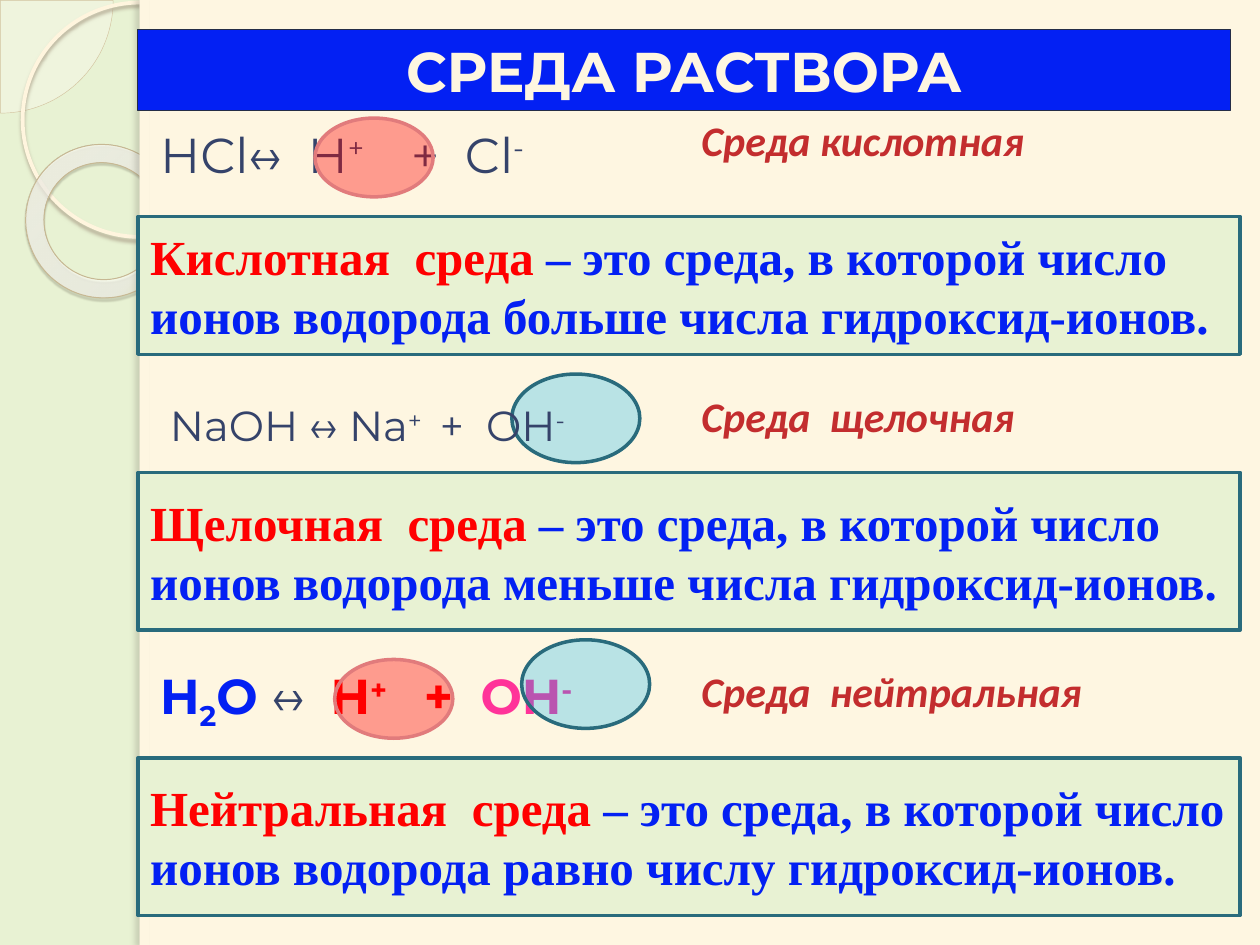
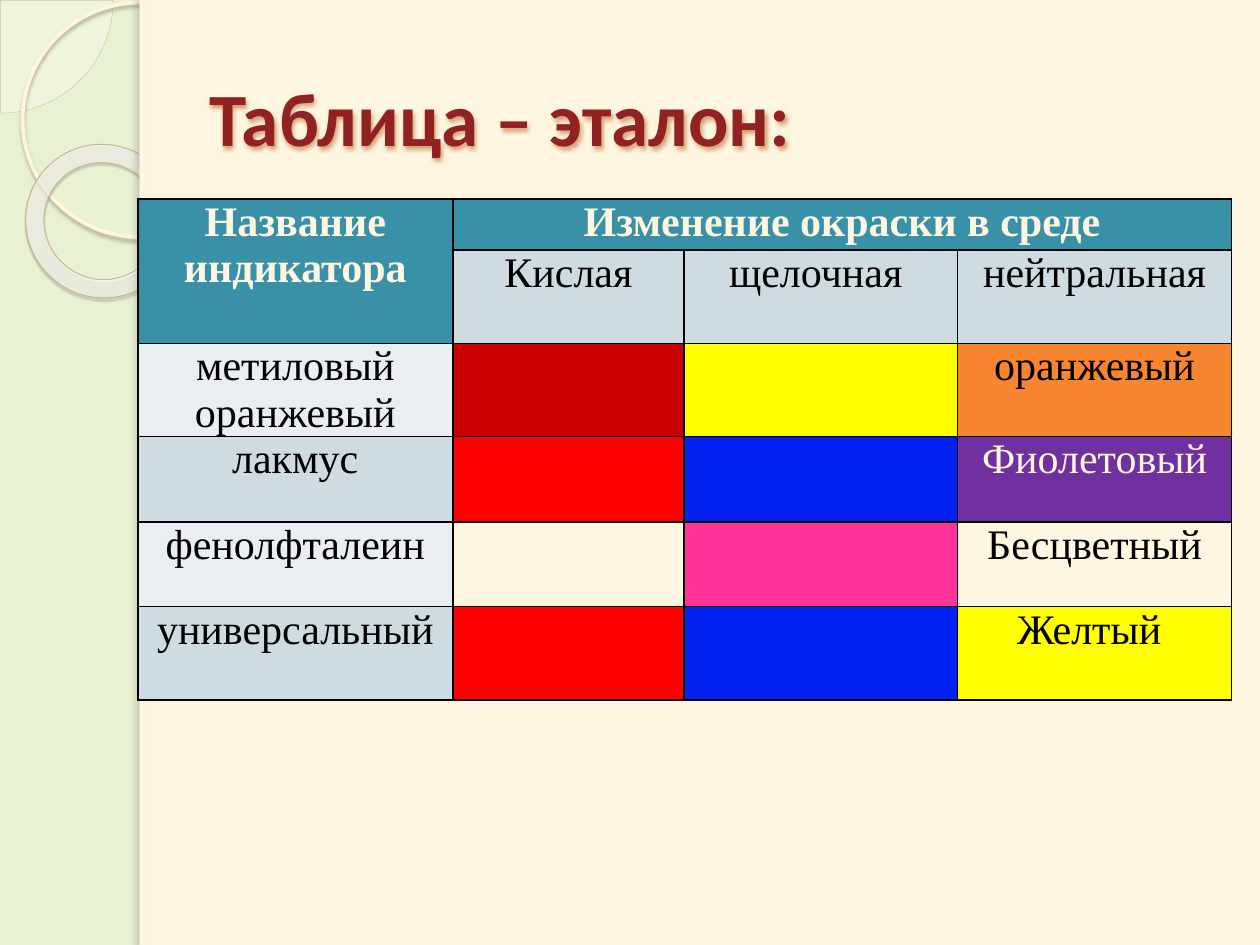
"""Builds two chemistry slides: the medium of a solution and a table of indicator colours."""
from pptx import Presentation, util as u
from pptx.dml.color import RGBColor
from pptx.enum import shapes, text
from pptx.oxml import parse_xml
from pptx.oxml.ns import nsdecls, qn

C = {
    "leaf": "E8F2D3", "cream": "FEF6E1", "blue": "0320F3", "navy": "242D46",
    "ink": "35436A", "red": "FF0000", "crimson": "C32D2E", "wine": "922222",
    "teal": "296B7C", "sky": "00B0F0", "rose": "E17B7C", "pink": "FF3399",
    "head": "3891A7", "band": "CEDCE1", "pale": "E8EEF1", "black": "000000",
    "scarlet": "CC0000", "yellow": "FFFF00", "orange": "F88631", "violet": "7030A0",
    "pearl": "FEFAF4", "sand": "D3C39F", "ring": "FFF5DE", "donut": "C7B893",
    "ring shade": "B0A68F", "donut shade": "5A5444", "edge shade": "736F63",
    "title shade": "C89058", "green edge": "65871D", "gold edge": "FFB809",
}
SERIF, SANS, FORMULA = "Times New Roman", "Calibri", "Montserrat"
SUP, SUB = {"baseline": "30000"}, {"baseline": "-25000"}
KIND = shapes.MSO_SHAPE

prs = Presentation()
prs.slide_width, prs.slide_height = u.Inches(10), u.Inches(7.5)
cell = prs.slide_width / 128


def write(frame, runs, size, font, bold=False, italic=False, align=text.PP_ALIGN.LEFT):
    """Adds runs given as (text, colour, rPr attributes) to the first paragraph."""
    frame.word_wrap = True
    line = frame.paragraphs[0]
    line.alignment = align
    for words, colour, attrs in runs:
        run = line.add_run()
        run.text = words
        run.font.size, run.font.name = u.Pt(size), font
        run.font.bold, run.font.italic = bold, italic
        run.font.color.rgb = RGBColor.from_string(C[colour])
        for key, value in attrs.items():
            run.font._element.set(key, value)


def draw(slide, kind, grid, fill=None, line=None, width=1, alpha=None):
    """Draws a preset shape placed in grid cells."""
    shape = slide.shapes.add_shape(kind, *[round(n * cell) for n in grid])
    shape.shadow.inherit = False
    if fill:
        shape.fill.solid()
        shape.fill.fore_color.rgb = RGBColor.from_string(C[fill])
    else:
        shape.fill.background()
    if alpha:
        colour = shape.element.spPr.find(qn("a:solidFill"))[0]
        colour.append(parse_xml(f'<a:alpha {nsdecls("a")} val="{alpha * 1000}"/>'))
    if line:
        shape.line.color.rgb = RGBColor.from_string(C[line])
        shape.line.width = u.Pt(width)
    else:
        shape.line.fill.background()
    return shape


media, standard = [prs.slides.add_slide(prs.slide_layouts[5]) for _ in range(2)]

master = prs.slide_master
master.background.fill.solid()
master.background.fill.fore_color.rgb = RGBColor.from_string(C["leaf"])
quarter = draw(media, KIND.PIE, (-11.4, -11.4, 22.9, 22.9), "pearl", "sand", 0.25, 33)
quarter.adjustments[0], quarter.adjustments[1] = 0, 54.02
circle = draw(media, KIND.OVAL, (2.3, 0.26, 23.8, 23.8), None, "ring", 2.15)
donut = draw(media, KIND.DONUT, (2.56, 14.72, 15.75, 15.5), None, "donut", 0.58)
donut.adjustments[0] = 0.12
donut.rotation = 38.6
stops = "".join(
    f'<a:gs pos="{pos}000"><a:srgbClr val="{tint}"><a:alpha val="{alpha}000"/></a:srgbClr></a:gs>'
    for pos, tint, alpha in [(0, "FFFCF6", 70), (70, "FFFEFB", 55), (100, "F0D28E", 60)])
donut_props = donut.element.spPr
donut_props.replace(donut_props.find(qn("a:noFill")), parse_xml(
    f'<a:gradFill {nsdecls("a")}><a:gsLst>{stops}</a:gsLst><a:path path="circle">'
    '<a:fillToRect l="-408000" t="-50000" r="508000" b="150000"/></a:path></a:gradFill>'))
panel = draw(media, KIND.RECTANGLE, (14.2, 0, 113.8, 96), "cream")
edge = draw(media, KIND.RECTANGLE, (14.2, 0, 1, 96), "cream")
for part in (quarter, circle, donut, panel, edge):
    master.shapes.element.append(part.element)

heading = media.shapes.title
heading.left, heading.top, heading.width, heading.height = [
    round(n * cell) for n in (14, 3, 111, 8.2)]
heading.fill.solid()
heading.fill.fore_color.rgb = RGBColor.from_string(C["blue"])
heading.line.color.rgb = RGBColor.from_string(C["navy"])
heading.line.width = u.Pt(0.75)
write(heading.text_frame, [("СРЕДА РАСТВОРА", "cream", {})], 32, FORMULA, True,
      align=text.PP_ALIGN.CENTER)

table_title = standard.shapes.title
table_title.left, table_title.top, table_title.width, table_title.height = [
    round(n * cell) for n in (20, 3.84, 105, 16)]
write(table_title.text_frame, [("Таблица – эталон:", "wine", {})], 43, SANS, True)
table_title.shadow.inherit = False

for title, outline, width in [(heading, "green edge", 0.71), (table_title, "gold edge", 1.42)]:
    title.text_frame.auto_size = text.MSO_AUTO_SIZE.NONE
    title.text_frame.vertical_anchor = text.MSO_ANCHOR.MIDDLE
    title.text_frame.paragraphs[0].runs[0].font._element.insert(0, parse_xml(
        f'<a:ln {nsdecls("a")} w="{u.Pt(width)}"><a:solidFill>'
        f'<a:srgbClr val="{C[outline]}"/></a:solidFill></a:ln>'))

for part, shade, alpha, blur, dist, angle in [
        (circle, "ring shade", 85, 2, 2, 90), (donut, "donut shade", 35, 1, 1.2, 75),
        (edge, "edge shade", 25, 3, 3, 180), (table_title, "title shade", 80, 2, 1.5, 60)]:
    part.element.spPr.find(qn("a:effectLst")).append(parse_xml(
        f'<a:outerShdw {nsdecls("a")} blurRad="{u.Pt(blur)}" dist="{u.Pt(dist)}" '
        f'dir="{angle * 60000}" algn="tl" rotWithShape="0"><a:srgbClr val="{C[shade]}">'
        f'<a:alpha val="{alpha * 1000}"/></a:srgbClr></a:outerShdw>'))

hydroxide_spots = [(52, 38, 13, 9), (53, 65, 13, 9)]
hydrogen_spots = [(32, 12, 12, 8), (34, 67, 12, 8)]
draw(media, KIND.OVAL, hydroxide_spots[0], "sky", "teal", 2, 27)

acid = [("НСl↔", "ink", {}), (" ", "ink", {"spc": "730"}), ("Н", "ink", {}), ("+", "ink", SUP),
        (" ", "ink", {"spc": "1950"}), ("+", "ink", {}), (" ", "ink", {"spc": "730"}),
        ("Cl", "ink", {}), ("-", "ink", SUP)]
alkali = [("NaOH ↔ Na", "ink", {}), ("+", "ink", SUP), (" ", "ink", {"spc": "400"}),
          ("+", "ink", {}), (" ", "ink", {"spc": "630"}), ("OH", "ink", {}), ("-", "ink", SUP)]
water = [("H", "blue", {}), ("2", "blue", SUB), ("O ", "blue", {}), ("↔", "ink", {"b": "0"}),
         (" ", "ink", {"b": "0", "spc": "730"}), ("H", "red", {}), ("+", "red", SUP),
         (" ", "red", {"spc": "1300"}), ("+", "red", {}), (" ", "red", {"spc": "780"}),
         ("OH", "pink", {}), ("-", "pink", SUP)]
wide = {"spc": "700"}

for formula, place, size, bold, medium, name_top, box_top, box_rows, term, relation in [
        (acid, (15, 12, 57, 7.3), 28, False, ["Среда кислотная"], 11, 22, 14,
         "Кислотная", "больше числа"),
        (alkali, (16, 40, 50, 6.4), 24, False, ["Среда", "щелочная"], 39, 48, 16,
         "Щелочная", "меньше числа"),
        (water, (15, 67, 50, 7.3), 28, True, ["Среда", "нейтральная"], 67, 77, 16,
         "Нейтральная", "равно числу")]:
    equation = media.shapes.add_textbox(*[round(n * cell) for n in place])
    write(equation.text_frame, formula, size, FORMULA, bold)
    label = media.shapes.add_textbox(*[round(n * cell) for n in (70, name_top, 45, 6.4)])
    name_runs = [(medium[0], "crimson", {})]
    for word in medium[1:]:
        name_runs += [(" ", "crimson", {"spc": "540"}), (word, "crimson", {})]
    write(label.text_frame, name_runs, 24, SANS, True, True)
    definition = draw(media, KIND.RECTANGLE, (14, box_top, 112, box_rows), "leaf", "teal", 2)
    definition.text_frame.vertical_anchor = text.MSO_ANCHOR.MIDDLE
    write(definition.text_frame, [
        (term, "red", {}), (" ", "red", wide), ("среда ", "red", {}),
        (f"– это среда, в которой число ионов водорода {relation} гидроксид-ионов.", "blue", {}),
    ], 28, SERIF, True)

for spot in hydrogen_spots:
    draw(media, KIND.OVAL, spot, "red", "rose", 2, 37)
draw(media, KIND.OVAL, hydroxide_spots[1], "sky", "teal", 2, 27)

column_cells = [32, 23.5, 27.8, 27.8]
row_cells = [5.2, 9.5, 9.4, 8.7, 8.6, 9.5]
indicators = [
    [("Название индикатора", "head"), ("Изменение окраски в среде", "head"),
     ("", "head"), ("", "head")],
    [("", "head"), ("Кислая", "band"), ("щелочная ", "band"), ("нейтральная", "band")],
    [("метиловый оранжевый", "pale"), ("", "scarlet"), ("", "yellow"), ("оранжевый", "orange")],
    [("лакмус", "band"), ("", "red"), ("", "blue"), ("Фиолетовый", "violet")],
    [("фенолфталеин", "pale"), ("", None), ("", "pink"), ("Бесцветный", None)],
    [("универсальный", "band"), ("", "red"), ("", "blue"), ("Желтый ", "yellow")],
]
grid = standard.shapes.add_table(6, 4, *[
    round(n * cell) for n in (14, 20.2, sum(column_cells), sum(row_cells))]).table
grid.first_row = grid.horz_banding = False
for column, width in zip(grid.columns, column_cells):
    column.width = round(width * cell)
for row, height in zip(grid.rows, row_cells):
    row.height = round(height * cell)
grid.cell(0, 0).merge(grid.cell(1, 0))
grid.cell(0, 1).merge(grid.cell(0, 3))

for r, entries in enumerate(indicators):
    for c, (words, fill) in enumerate(entries):
        field = grid.cell(r, c)
        field.margin_left = field.margin_right = u.Inches(0.07)
        field.margin_top = field.margin_bottom = 0
        for side in ("lnL", "lnR", "lnT", "lnB"):
            field._tc.get_or_add_tcPr().append(parse_xml(
                f'<a:{side} {nsdecls("a")} w="{u.Pt(1)}"><a:solidFill>'
                f'<a:srgbClr val="{C["black"]}"/></a:solidFill></a:{side}>'))
        if fill:
            field.fill.solid()
            field.fill.fore_color.rgb = RGBColor.from_string(C[fill])
        else:
            field.fill.background()
        if words:
            ink = "cream" if fill in ("head", "violet") else "black"
            write(field.text_frame, [(words, ink, {})], 24, SERIF, fill == "head",
                  align=text.PP_ALIGN.CENTER)

prs.save("out.pptx")
